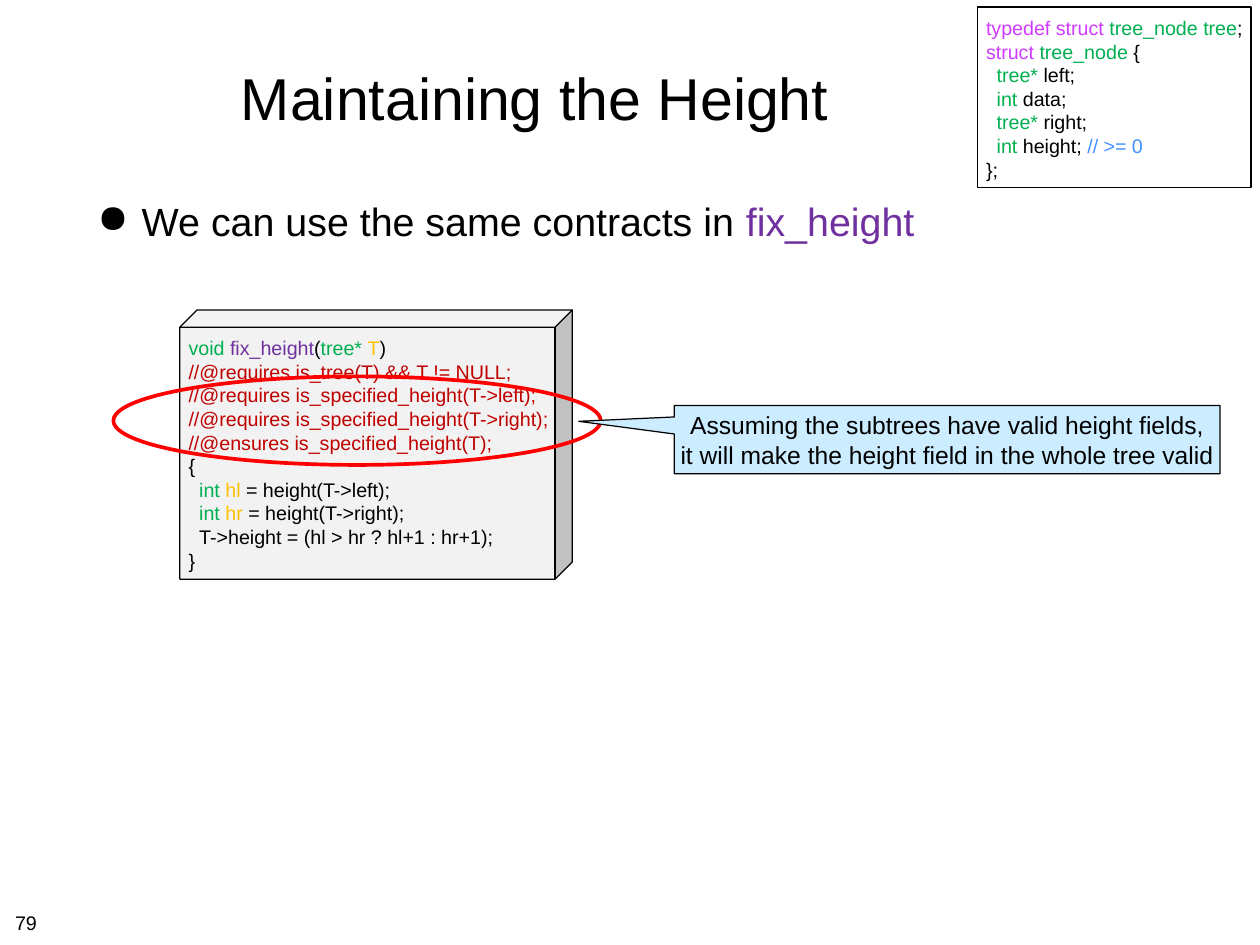
from lxml import etree
from pptx import Presentation
from pptx.dml.color import RGBColor
from pptx.enum.shapes import MSO_SHAPE
from pptx.enum.text import MSO_ANCHOR, MSO_AUTO_SIZE, PP_ALIGN
from pptx.oxml.ns import qn
from pptx.util import Inches, Pt

RECT = MSO_SHAPE.RECTANGLE
CUBE = MSO_SHAPE.CUBE
OVAL = MSO_SHAPE.OVAL
CALL = MSO_SHAPE.RECTANGULAR_CALLOUT
TOP, MID = MSO_ANCHOR.TOP, MSO_ANCHOR.MIDDLE
LEFT, CENTER = PP_ALIGN.LEFT, PP_ALIGN.CENTER
FIT = MSO_AUTO_SIZE.SHAPE_TO_FIT_TEXT
FONT = "Arial"
STEP = 0.12
COLORS = {
    "black": "000000",
    "pink": "D03BFF",
    "green": "00B050",
    "blue": "4091FF",
    "plum": "7030A0",
    "gold": "FFC000",
    "dark": "C00000",
    "red": "FF0000",
    "gray": "F2F2F2",
    "sky": "CCECFF",
}

STRUCT = [
    (0, [("typedef struct ", "pink"), ("tree_node tree", "green"), (";", "black")]),
    (0, [("struct ", "pink"), ("tree_node ", "green"), ("{", "black")]),
    (1, [("tree*", "green"), (" left;", "black")]),
    (1, [("int ", "green"), ("data;", "black")]),
    (1, [("tree*", "green"), (" right;", "black")]),
    (1, [("int ", "green"), ("height; ", "black"), ("// >= 0", "blue")]),
    (0, [("};", "black")]),
]
CODE = [
    (0, [("void ", "green"), ("fix_height", "plum"), ("(", "black"),
         ("tree* ", "green"), ("T", "gold"), (")", "black")]),
    (0, [("//@requires is_tree(T) && T != NULL;", "dark")]),
    (0, [("//@requires is_specified_height(T->left);", "dark")]),
    (0, [("//@requires is_specified_height(T->right);", "dark")]),
    (0, [("//@ensures is_specified_height(T);", "dark")]),
    (0, [("{", "black")]),
    (1, [("int ", "green"), ("hl", "gold"), (" = height(T->left);", "black")]),
    (1, [("int ", "green"), ("hr", "gold"), (" = height(T->right);", "black")]),
    (1, [("T->height = (hl > hr ? hl+1 : hr+1);", "black")]),
    (0, [("}", "black")]),
]
NOTE = [
    (0, [("Assuming the subtrees have valid height fields,", "black")]),
    (0, [("it will make the height field in the whole tree valid", "black")]),
]
POINT = [(0, [("We can use the same contracts in ", "black"), ("fix_height", "plum")])]


class Deck:
    def __init__(self, slide):
        self.slide = slide

    def color(self, name):
        return RGBColor.from_string(COLORS[name])

    def label(self, shape, lines, size, align=LEFT, anchor=TOP, pads=(0.06, 0.06), wrap=True):
        frame = shape.text_frame
        frame.word_wrap = wrap
        frame.vertical_anchor = anchor
        near, far = pads
        frame.margin_left = frame.margin_top = Inches(near)
        frame.margin_right = frame.margin_bottom = Inches(far)
        for i, (level, parts) in enumerate(lines):
            para = frame.add_paragraph() if i else frame.paragraphs[0]
            para.alignment = align
            if level:
                props = para._p.get_or_add_pPr()
                props.set("marL", str(Inches(STEP * level)))
                props.set("indent", "0")
            for text, name in parts:
                run = para.add_run()
                run.text = text
                run.font.name = FONT
                run.font.size = Pt(size)
                run.font.color.rgb = self.color(name)

    def text(self, box, lines, size, **style):
        shape = self.slide.shapes.add_textbox(*map(Inches, box))
        self.label(shape, lines, size, **style)
        return shape

    def shape(self, kind, box, fill=None, line="black", width=1, adjust=()):
        shape = self.slide.shapes.add_shape(kind, *map(Inches, box))
        shape.shadow.inherit = False
        if fill:
            shape.fill.solid()
            shape.fill.fore_color.rgb = self.color(fill)
        else:
            shape.fill.background()
        shape.line.color.rgb = self.color(line)
        shape.line.width = Pt(width)
        for i, value in enumerate(adjust):
            shape.adjustments[i] = value
        return shape

    def code(self, kind, box, lines, **style):
        shape = self.shape(kind, box, **style)
        self.label(shape, lines, 16, pads=(0.1, 0.06), wrap=False)
        shape.text_frame.auto_size = FIT

    def bullet(self, box, lines):
        para = self.text(box, lines, 32).text_frame.paragraphs[0]
        para.space_before = Pt(8)
        props = para._p.get_or_add_pPr()
        props.set("marL", str(Inches(0.5)))
        props.set("indent", str(-Inches(0.5)))
        tint = etree.SubElement(props, qn("a:buClr"))
        etree.SubElement(tint, qn("a:srgbClr"), val=COLORS["black"])
        etree.SubElement(props, qn("a:buChar"), char="●")


def main():
    show = Presentation()
    show.slide_width, show.slide_height = Inches(14.22), Inches(10.67)
    deck = Deck(show.slides.add_slide(show.slide_layouts[6]))
    deck.text((1.04, 0.28, 9.99, 1.64), [(0, [("Maintaining the Height", "black")])],
              48, align=CENTER, anchor=MID)
    deck.bullet((1.04, 2.17, 12.14, 7.54), POINT)
    deck.code(RECT, (11.03, 0.08, 3.09, 2.04), STRUCT)
    deck.code(CUBE, (2.03, 3.5, 4.43, 3.04), CODE, fill="gray", adjust=(0.064,))
    deck.shape(OVAL, (1.28, 4.25, 5.5, 1), line="red", width=3)
    note = deck.shape(CALL, (7.61, 4.58, 6.16, 0.77), fill="sky", adjust=(-0.675, -0.269))
    deck.label(note, NOTE, 20, align=CENTER, anchor=MID, pads=(0.05, 0.05))
    deck.text((0.11, 10.23, 0.37, 0.35), [(0, [("79", "black")])], 16, wrap=False)
    show.save("out.pptx")


if __name__ == "__main__":
    main()
